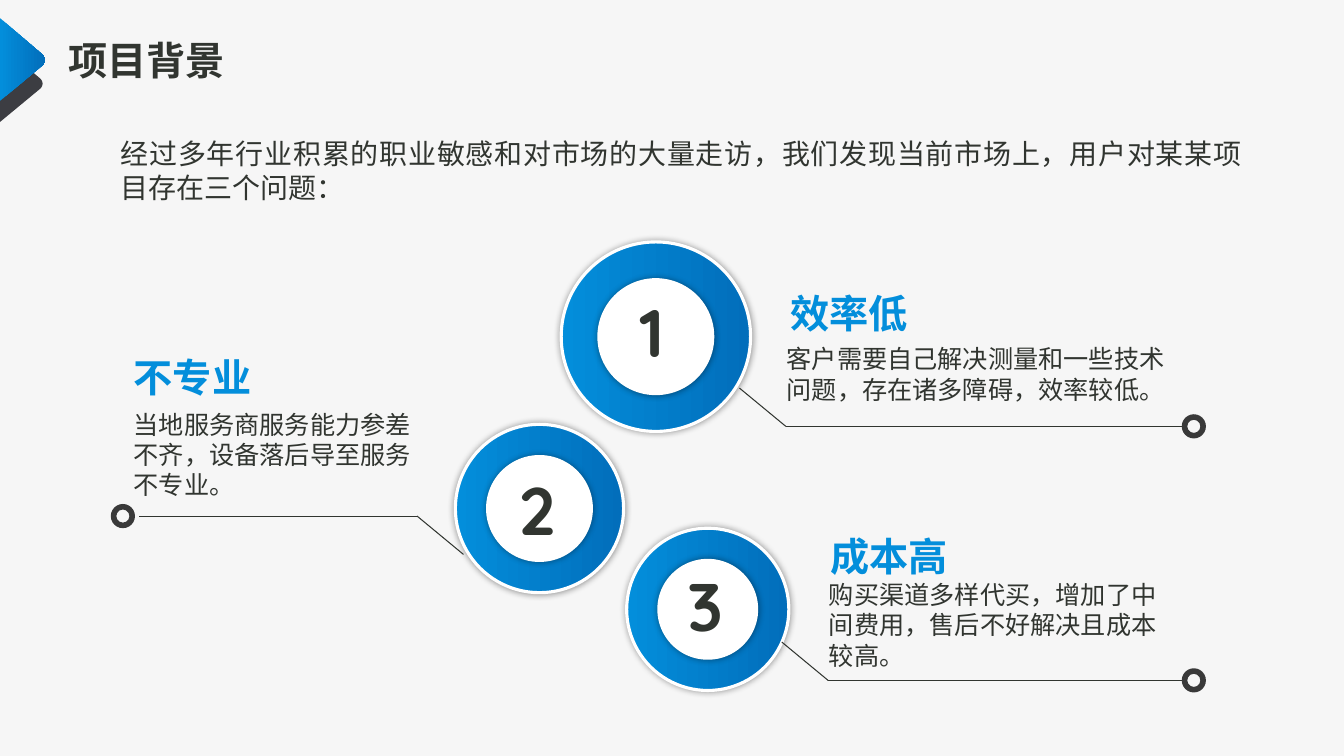
from lxml import etree
from pptx import Presentation
from pptx.dml.color import RGBColor
from pptx.enum import shapes, text
from pptx.oxml import ns
from pptx.util import Inches, Pt

INK = RGBColor(0x31, 0x35, 0x30)
BLUE_LIGHT = RGBColor(0x03, 0x8E, 0xDB)
BLUE_DARK = RGBColor(0x02, 0x6E, 0xBB)
CHARCOAL = RGBColor(0x3C, 0x3D, 0x42)
RING_GREY = RGBColor(0x39, 0x39, 0x39)
WHITE = RGBColor(0xFF, 0xFF, 0xFF)
BACKGROUND = RGBColor(0xF6, 0xF6, 0xF6)
FONT = "Quicksand"

INTRO = "经过多年行业积累的职业敏感和对市场的大量走访，我们发现当前市场上，用户对某某项目存在三个问题："

# Heading and its box, body and its box (left, top, width, height)
PROBLEMS = [
    ("效率低", (7.75, 2.82, 1.78, 0.57),
     "客户需要自己解决测量和一些技术问题，存在诸多障碍，效率较低。", (7.71, 3.36, 4.02, 0.71)),
    ("不专业", (1.23, 3.46, 1.81, 0.57),
     "当地服务商服务能力参差不齐，设备落后导至服务不专业。", (1.23, 4.01, 3.16, 1.01)),
    ("成本高", (8.14, 5.23, 1.78, 0.57),
     "购买渠道多样代买，增加了中间费用，售后不好解决且成本较高。", (8.13, 5.7, 3.6, 1.01)),
]
# Centre x, centre y, outer and inner diameter, box of the number
BADGES = [
    (6.51, 3.34, 1.88, 1.13, (5.94, 2.83, 1.06, 0.91)),
    (5.355, 5.045, 1.67, 1.03, (4.86, 4.6, 0.94, 0.91)),
    (7.025, 6.045, 1.61, 0.97, (6.48, 5.55, 1.04, 0.91)),
]
# Knee x, line y, far end x, ring left, direction (1 right, -1 left)
LEADERS = [
    (7.8, 4.23, 11.73, 11.73, 1),
    (4.14, 5.12, 1.38, 1.1, -1),
    (8.22, 6.75, 11.73, 11.73, 1),
]


def fill_blue(fill):
    fill.gradient()
    fill.gradient_angle = 0
    for stop, color in zip(fill.gradient_stops, (BLUE_LIGHT, BLUE_DARK)):
        stop.color.rgb = color


def fill_solid(fill, color):
    fill.solid()
    fill.fore_color.rgb = color


def add_text(slide, box, words, size, bold=False, blue=False, align=text.PP_ALIGN.LEFT):
    frame = slide.shapes.add_textbox(*map(Inches, box)).text_frame
    frame.word_wrap = True
    frame.auto_size = text.MSO_AUTO_SIZE.SHAPE_TO_FIT_TEXT
    paragraph = frame.paragraphs[0]
    paragraph.text = words
    paragraph.alignment = align
    font = paragraph.font
    font.name, font.size, font.bold = FONT, Pt(size), bold
    if blue:
        fill_blue(font.fill)
    else:
        font.color.rgb = INK


def add_disc(slide, center_x, center_y, diameter):
    disc = slide.shapes.add_shape(
        shapes.MSO_SHAPE.OVAL, Inches(center_x - diameter / 2),
        Inches(center_y - diameter / 2), Inches(diameter), Inches(diameter))
    disc.line.color.rgb = WHITE
    disc.line.width = Pt(2.25)
    # Soft shadow all round
    disc.shadow.inherit = False
    effects = disc._element.spPr.find(ns.qn("a:effectLst"))
    shadow = etree.SubElement(effects, ns.qn("a:outerShdw"),
                              blurRad=str(Pt(5)), algn="ctr", rotWithShape="0")
    black = etree.SubElement(shadow, ns.qn("a:srgbClr"), val="000000")
    etree.SubElement(black, ns.qn("a:alpha"), val="40000")
    return disc


def add_badge(slide, number, center_x, center_y, outer, inner, number_box):
    fill_blue(add_disc(slide, center_x, center_y, outer).fill)
    fill_solid(add_disc(slide, center_x, center_y, inner).fill, WHITE)
    add_text(slide, number_box, str(number), 48, bold=True, align=text.PP_ALIGN.CENTER)


def add_line(slide, start, end):
    line = slide.shapes.add_connector(
        shapes.MSO_CONNECTOR.STRAIGHT, *map(Inches, (*start, *end)))
    line.line.color.rgb = INK
    line.line.width = Pt(0.75)
    etree.SubElement(line._element.spPr, ns.qn("a:effectLst"))


def add_leader(slide, knee_x, y, end_x, ring_left, direction):
    knee = (knee_x, y)
    add_line(slide, (knee_x - 0.46 * direction, y - 0.38 * direction), knee)
    add_line(slide, (end_x, y), knee)
    size = 0.24
    ring = slide.shapes.add_shape(
        shapes.MSO_SHAPE.DONUT, Inches(ring_left), Inches(y - size / 2),
        Inches(size), Inches(size))
    ring.adjustments[0] = 0.23
    ring.shadow.inherit = False
    fill_solid(ring.fill, RING_GREY)
    ring.line.fill.background()


def add_corner_arrow(slide, top, bottom, shoulder_x, upper_y, lower_y, bulge):
    """Triangle on the left edge whose tip is a sampled cubic curve."""
    handle = 0.03
    curve = []
    for step in range(13):
        t = step / 12
        x = shoulder_x + 3 * t * (1 - t) * bulge
        y = ((1 - t) ** 3 * upper_y + 3 * t * (1 - t) ** 2 * (upper_y + handle)
             + 3 * t ** 2 * (1 - t) * (lower_y - handle) + t ** 3 * lower_y)
        curve.append((Inches(x), Inches(y)))
    builder = slide.shapes.build_freeform(0, Inches(top))
    builder.add_line_segments(curve + [(0, Inches(bottom))], close=True)
    arrow = builder.convert_to_shape()
    arrow.shadow.inherit = False
    arrow.line.fill.background()
    return arrow


def main():
    deck = Presentation()
    deck.slide_width, deck.slide_height = Inches(13.34), Inches(7.5)
    slide = deck.slides.add_slide(deck.slide_layouts[6])
    fill_solid(slide.background.fill, BACKGROUND)

    # Title with corner arrows
    add_text(slide, (0.58, 0.31, 5.12, 0.57), "项目背景", 28, bold=True)
    fill_solid(add_corner_arrow(slide, 0.44, 1.21, 0.4, 0.78, 0.88, 0.03).fill, CHARCOAL)
    fill_blue(add_corner_arrow(slide, 0.18, 1, 0.42, 0.54, 0.65, 0.04).fill)

    # Introduction
    add_text(slide, (1.1, 1.31, 11.32, 0.77), INTRO, 20, align=text.PP_ALIGN.JUSTIFY)

    # Numbered badges
    for number, badge in enumerate(BADGES, 1):
        add_badge(slide, number, *badge)

    # Problem texts
    for heading, heading_box, body, body_box in PROBLEMS:
        add_text(slide, heading_box, heading, 28, bold=True, blue=True)
        add_text(slide, body_box, body, 18)

    # Leader lines with end rings
    for leader in LEADERS:
        add_leader(slide, *leader)

    deck.save("out.pptx")


if __name__ == "__main__":
    main()
